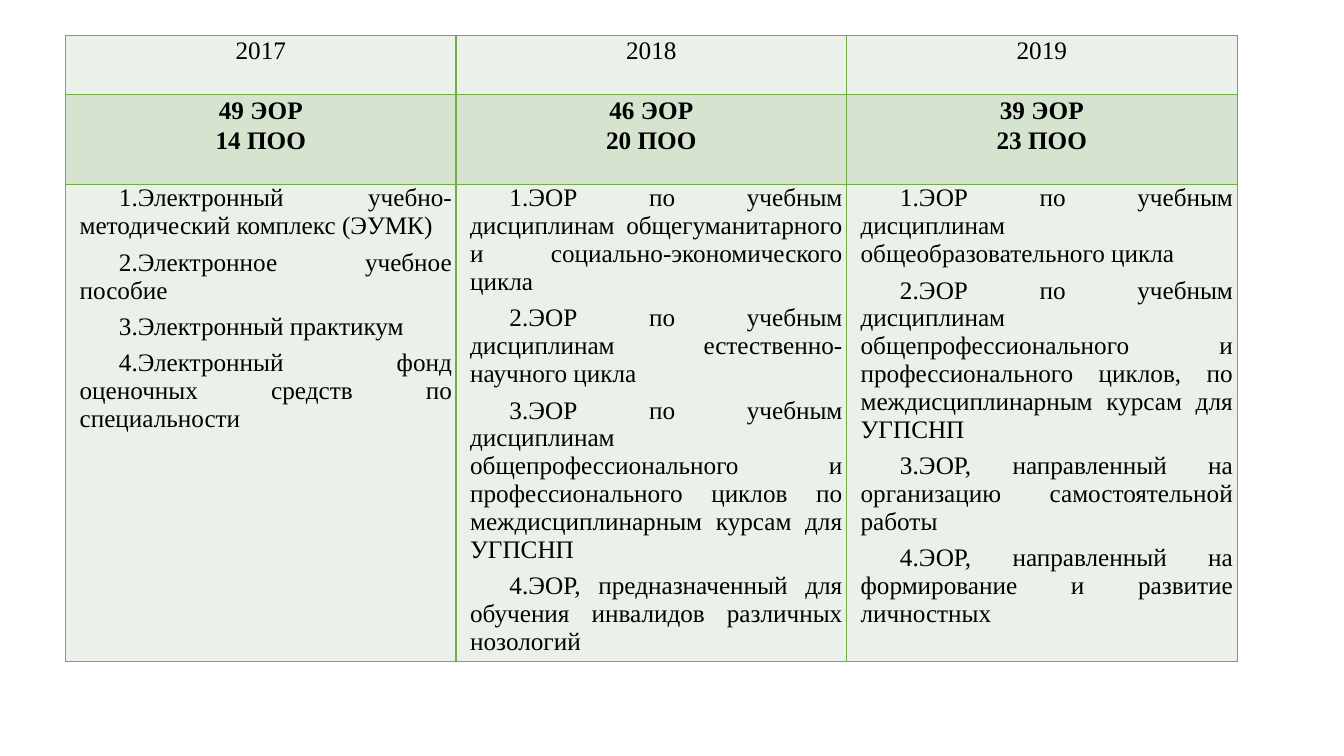
from lxml import etree
from pptx import Presentation
from pptx.dml.color import RGBColor
from pptx.enum.text import PP_ALIGN
from pptx.oxml.ns import qn
from pptx.util import Inches, Pt

CENTER, JUSTIFY = PP_ALIGN.CENTER, PP_ALIGN.JUSTIFY
COLORS = {"text": "000000", "light": "EBF1E9", "band": "D5E3CF", "line": "70AD47"}
FONT = {"name": "Times New Roman", "size": Pt(18)}
MARGINS = {"margin_left": Inches(0.04), "margin_right": Inches(0.04),
           "margin_top": 0, "margin_bottom": 0}
HEADING = {"alignment": CENTER, "line_spacing": 1.07}
ITEM = {"alignment": JUSTIFY, "space_after": Pt(6)}

YEARS = [["2017"], ["2018"], ["2019"]]
COUNTS = [["49 ЭОР", "14 ПОО"], ["46 ЭОР", "20 ПОО"], ["39 ЭОР", "23 ПОО"]]
RESOURCES = [
    ["Электронный учебно-методический комплекс (ЭУМК)",
     "Электронное учебное пособие",
     "Электронный практикум",
     "Электронный фонд оценочных средств по специальности"],
    ["ЭОР по учебным дисциплинам общегуманитарного и социально-экономического цикла",
     "ЭОР по учебным дисциплинам естественно-научного цикла",
     "ЭОР по учебным дисциплинам общепрофессионального и профессионального циклов "
     "по междисциплинарным курсам для УГПСНП",
     "ЭОР, предназначенный для обучения инвалидов различных нозологий"],
    ["ЭОР по учебным дисциплинам общеобразовательного цикла",
     "ЭОР по учебным дисциплинам общепрофессионального и профессионального циклов, "
     "по междисциплинарным курсам для УГПСНП",
     "ЭОР, направленный на организацию самостоятельной работы",
     "ЭОР, направленный на формирование и развитие личностных"],
]
# Row height, cell texts, fill, paragraph format, bold, numbered
ROWS = [
    (0.59, YEARS, "light", HEADING, False, False),
    (0.89, COUNTS, "band", HEADING, True, False),
    (4.73, RESOURCES, "light", ITEM, False, True),
]


def add_borders(cell):
    tc_pr = cell._tc.get_or_add_tcPr()
    for side in ("lnL", "lnR", "lnT", "lnB"):
        ln = etree.SubElement(tc_pr, qn(f"a:{side}"), w=str(Pt(1)))
        fill = etree.SubElement(ln, qn("a:solidFill"))
        etree.SubElement(fill, qn("a:srgbClr"), val=COLORS["line"])


def add_number(p):
    p_pr = p._p.get_or_add_pPr()
    p_pr.set("marL", str(Inches(0.1)))
    p_pr.set("indent", str(Inches(0.39)))
    etree.SubElement(p_pr, qn("a:buFont"), typeface="+mj-lt")
    etree.SubElement(p_pr, qn("a:buAutoNum"), type="arabicPeriod")


prs = Presentation()
prs.slide_width, prs.slide_height = Inches(13.33), Inches(7.5)
s = prs.slides.add_slide(prs.slide_layouts[6])

# Table grid: three equal columns, one per year
height = sum(row[0] for row in ROWS)
table = s.shapes.add_table(len(ROWS), len(YEARS), Inches(0.65), Inches(0.35),
                           Inches(11.62), Inches(height)).table

# Cells
for i, (row_height, texts, color, layout, bold, numbered) in enumerate(ROWS):
    table.rows[i].height = Inches(row_height)
    for j, lines in enumerate(texts):
        cell = table.cell(i, j)
        for key, value in MARGINS.items():
            setattr(cell, key, value)
        add_borders(cell)
        cell.fill.solid()
        cell.fill.fore_color.rgb = RGBColor.from_string(COLORS[color])

        # Paragraphs
        tf = cell.text_frame
        for k, line in enumerate(lines):
            p = tf.add_paragraph() if k else tf.paragraphs[0]
            for key, value in layout.items():
                setattr(p, key, value)
            if numbered:
                add_number(p)
            r = p.add_run()
            r.text = line
            for key, value in {**FONT, "bold": bold}.items():
                setattr(r.font, key, value)
            r.font.color.rgb = RGBColor.from_string(COLORS["text"])

prs.save("out.pptx")
